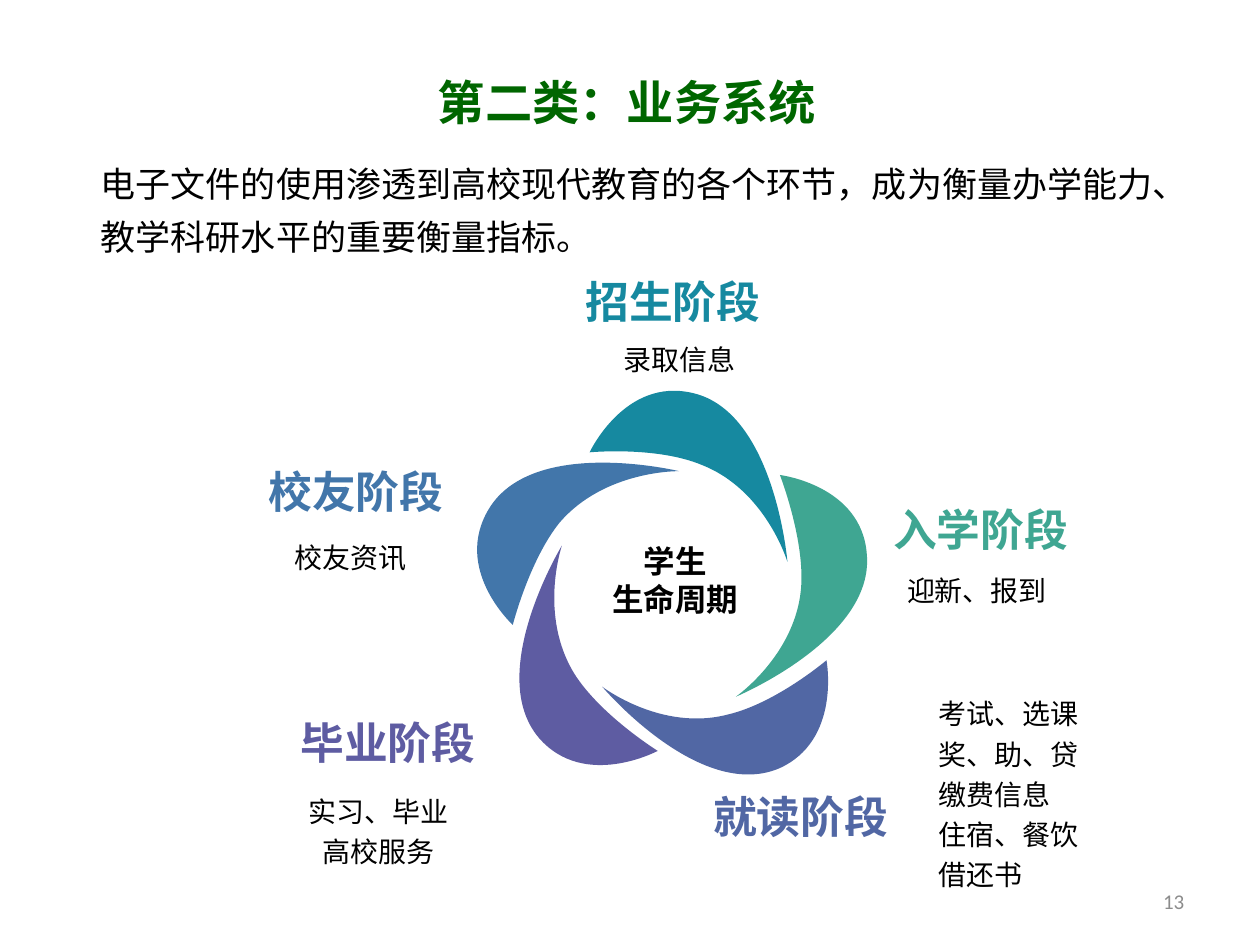
from lxml import etree
from pptx import Presentation
from pptx.dml.color import RGBColor
from pptx.enum import text as t
from pptx.oxml.ns import qn
from pptx.util import Pt

TEAL = RGBColor(0x16, 0x89, 0xA0)
GREEN = RGBColor(0x3F, 0xA6, 0x92)
INDIGO = RGBColor(0x51, 0x67, 0xA4)
PURPLE = RGBColor(0x5E, 0x5C, 0xA2)
BLUE = RGBColor(0x42, 0x76, 0xAA)
DARK_GREEN = RGBColor(0x00, 0x66, 0x00)
BLACK = RGBColor(0, 0, 0)
GRAY = RGBColor(0x8C, 0x8C, 0x8C)
CJK = "Noto Sans CJK SC"
LEFT, CENTER, RIGHT = t.PP_ALIGN.LEFT, t.PP_ALIGN.CENTER, t.PP_ALIGN.RIGHT
TOP, MIDDLE = t.MSO_ANCHOR.TOP, t.MSO_ANCHOR.MIDDLE

presentation = Presentation()
presentation.slide_width, presentation.slide_height = Pt(720), Pt(540)
slide = presentation.slides.add_slide(presentation.slide_layouts[6])


def add_text(box, content, size, color, bold=False, align=LEFT, anchor=TOP,
             spacing=None, font=CJK, wrap=True):
    shape = slide.shapes.add_textbox(*map(Pt, box))
    frame = shape.text_frame
    frame.word_wrap = wrap
    frame.vertical_anchor = anchor
    frame.margin_left = frame.margin_right = 0
    frame.margin_top = frame.margin_bottom = 0
    frame.text = content
    for paragraph in frame.paragraphs:
        paragraph.alignment = align
        paragraph.line_spacing = spacing
        for run in paragraph.runs:
            run.font.size, run.font.bold = Pt(size), bold
            run.font.name = font
            run.font.color.rgb = color
            east_asian = etree.SubElement(run._r.get_or_add_rPr(), qn("a:ea"))
            east_asian.set("typeface", font)


def add_petal(points, color):
    """Draw four Bezier curves; points are hundredths of an inch (0.72 pt)."""
    start, crown_in, crown, crown_out, tip, hollow_in, hollow, hollow_out = points
    controls = [start, crown_in, crown, crown_out, tip, tip,
                tip, hollow_in, hollow, hollow_out, start, start]
    builder = slide.shapes.build_freeform(*start, scale=Pt(0.72))
    builder.add_line_segments(controls, close=True)
    shape = builder.convert_to_shape()
    shape.shadow.inherit = False
    shape.fill.solid()
    shape.fill.fore_color.rgb = color
    shape.line.fill.background()
    # Turn every three line points into one cubic curve
    lines = list(shape._element.iter(qn("a:lnTo")))
    for first in range(0, len(lines), 3):
        curve = etree.Element(qn("a:cubicBezTo"))
        lines[first].addprevious(curve)
        for line in lines[first:first + 3]:
            curve.append(line[0])
            line.getparent().remove(line)


# Petals of the life cycle
petals = [
    (BLUE, [(407, 496), (359, 452), (388, 404), (423, 346),
            (539, 374), (480, 373), (444, 415), (420, 445)]),
    (TEAL, [(468, 359), (496, 299), (550, 312), (615, 327),
            (625, 446), (608, 389), (557, 369), (521, 354)]),
    (GREEN, [(619, 377), (684, 385), (688, 440), (694, 507),
             (584, 553), (633, 519), (636, 464), (638, 426)]),
    (INDIGO, [(656, 524), (668, 588), (618, 610), (555, 636),
              (478, 545), (525, 581), (578, 567), (616, 558)]),
    (PURPLE, [(522, 596), (464, 627), (428, 586), (384, 535),
              (446, 433), (427, 488), (456, 535), (477, 568)]),
]
for color, points in petals:
    add_petal(points, color)

# Stage headings: text, colour, box, alignment, anchor
headings = [
    ("招生阶段", TEAL, (307, 157, 154.8, 18), CENTER, TOP),
    ("入学阶段", GREEN, (510.5, 293, 133, 18), LEFT, MIDDLE),
    ("就读阶段", INDIGO, (407.5, 457.2, 133, 18), LEFT, MIDDLE),
    ("毕业阶段", PURPLE, (163.5, 414.7, 108, 18), RIGHT, MIDDLE),
    ("校友阶段", BLUE, (151.3, 271.4, 102, 18), RIGHT, MIDDLE),
]
for content, color, box, align, anchor in headings:
    add_text(box, content, 25, color, True, align, anchor)

# Stage details
details = [
    ("录取信息", (311, 192.2, 154.8, 39), CENTER, TOP),
    ("迎新、报到", (483, 319, 150.5, 33), CENTER, MIDDLE),
    ("考试、选课\n奖、助、贷\n缴费信息\n住宿、餐饮\n借还书",
     (536.4, 380.2, 150.5, 143.3), LEFT, MIDDLE),
    ("实习、毕业\n高校服务", (133.2, 456.5, 166.3, 33), CENTER, MIDDLE),
    ("校友资讯", (120.2, 300.2, 160.6, 33), CENTER, MIDDLE),
]
for content, box, align, anchor in details:
    add_text(box, content, 16, BLACK, align=align, anchor=anchor, spacing=1.2)

# Introduction, centre label, title and slide number
add_text((57.6, 87.1, 619.2, 59.8),
         "电子文件的使用渗透到高校现代教育的各个环节，成为衡量办学能力、教学科研水平的重要衡量指标。",
         20, BLACK, spacing=Pt(30))
add_text((349.2, 309.6, 73.4, 43.9), "学生\n生命周期", 18, BLACK, True, CENTER, wrap=False)
add_text((232.6, 41.8, 251.3, 33.1), "第二类：业务系统", 27, DARK_GREEN, True, CENTER)
add_text((523.4, 504, 153.4, 21.6), "13", 12, GRAY, align=RIGHT, anchor=MIDDLE,
         font="Calibri")

presentation.save("out.pptx")
